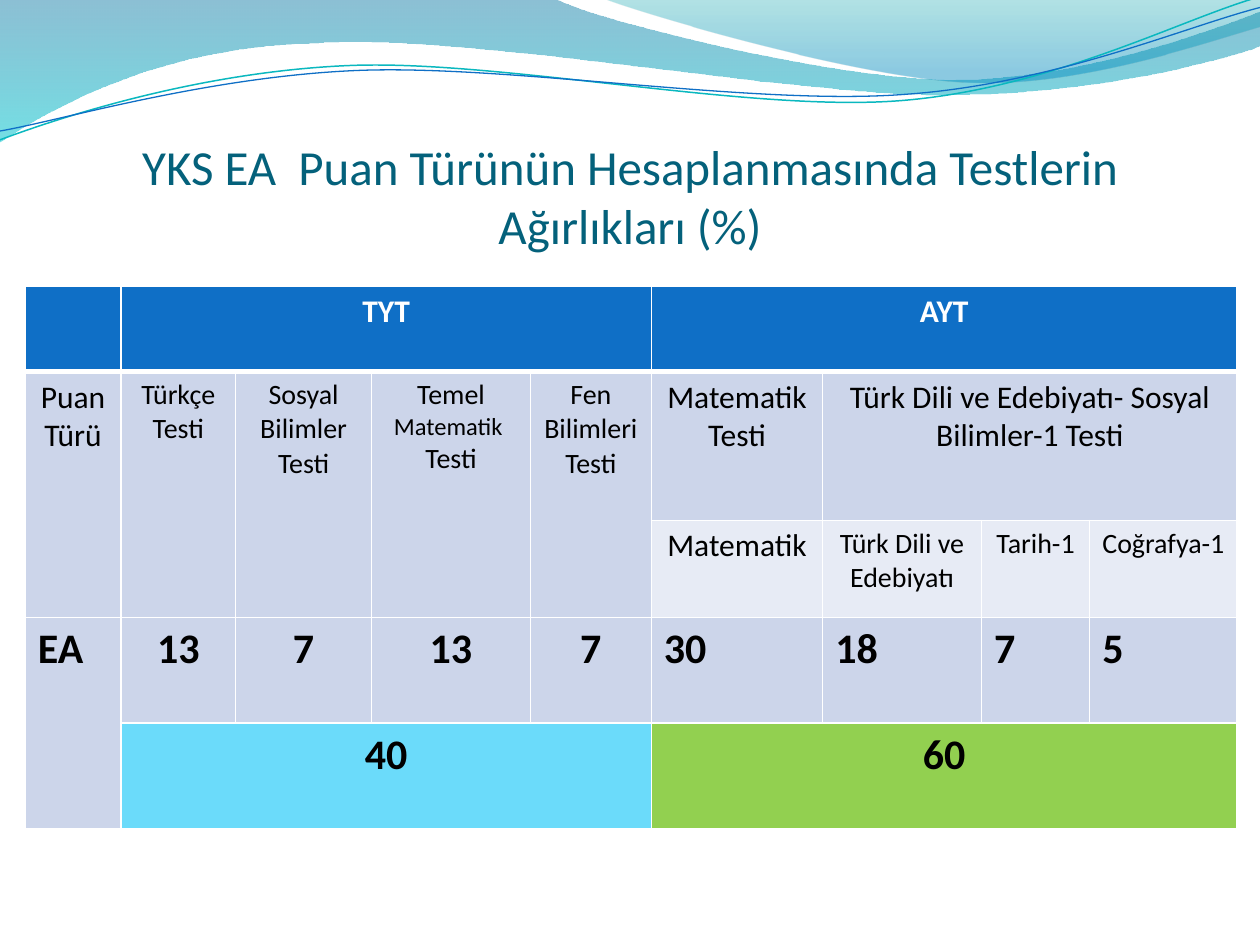
from dataclasses import dataclass
from math import cos, radians, sin

from lxml import etree
from pptx import Presentation
from pptx.dml.color import RGBColor
from pptx.enum.text import MSO_ANCHOR, PP_ALIGN
from pptx.oxml.ns import qn
from pptx.util import Inches, Pt

CENTER, LEFT = PP_ALIGN.CENTER, PP_ALIGN.LEFT
BOTTOM = MSO_ANCHOR.BOTTOM
FONT = "Calibri"
COLORS = {
    "title": "04617B", "header": "0F6FC6", "band": "CCD5EA", "light": "E7EBF5",
    "tyt": "6BDBFA", "ayt": "92D050", "white": "FFFFFF", "black": "000000",
    "deep": "0074A1", "aqua": "00C6CF", "teal": "00A1A9", "sky": "008BBF",
    "teal_line": "0AB8BF",
}


@dataclass
class Stop:
    position: float
    color: str
    opacity: int


@dataclass
class Wave:
    """Outline in inches as drawn: 2 numbers make a line, 6 a Bezier curve."""
    start: tuple
    segments: list
    stops: tuple = ()
    line: str = ""
    width: float = 0
    rotation: float = 0
    center: tuple = (0, 0)


@dataclass
class Entry:
    row: int
    column: int
    paragraphs: list  # each paragraph is a list of (text, size) runs
    fill: str = "band"
    rows: int = 1
    columns: int = 1
    bold: bool = False
    color: str = "black"
    align: PP_ALIGN = CENTER


WAVES = [
    Wave((0, 0), [
        (4.4, -0.01), (4.76, 0.17, 6.64, 0.63, 7.58, 0.63),
        (8.53, 0.63, 9.58, 0.26, 10, 0.09), (10.01, 0.36),
        (9.83, 0.44, 8.7, 0.76, 7.46, 0.75), (6.22, 0.75, 3.82, 0.28, 2.57, 0.34),
        (1.29, 0.36, 0.46, 0.83, -0.01, 1.13), (0, 0),
    ], stops=(Stop(0, "deep", 45), Stop(1, "aqua", 55))),
    Wave((4.79, -0.01), [
        (5.09, 0.11, 6.82, 0.62, 7.69, 0.65), (8.56, 0.69, 9.61, 0.32, 10, 0.21),
        (10, 0), (4.79, -0.01),
    ], stops=(Stop(0, "teal", 30), Stop(0.8, "sky", 45))),
    Wave((0, 1.11), [
        (0.48, 0.93, 1.58, 0.57, 2.77, 0.52), (3.95, 0.47, 5.93, 0.89, 7.13, 0.8),
        (8.33, 0.71, 9.38, 0.15, 9.98, -0.02),
    ], line="teal_line", width=0.85, rotation=357.3, center=(4.99, 0.57)),
    Wave((0, 1.04), [
        (0.47, 0.96, 1.64, 0.61, 2.83, 0.56), (4.03, 0.51, 5.97, 0.84, 7.17, 0.75),
        (8.36, 0.67, 9.41, 0.21, 10, 0.06),
    ], line="header", width=0.75, rotation=357.3, center=(5, 0.59)),
]

COLUMN_WIDTHS = [0.76, 0.91, 1.08, 1.26, 0.96, 1.36, 1.26, 0.86, 1.17]
ROW_HEIGHTS = [0.68, 1.18, 0.77, 0.84, 0.84]
WEIGHTS = [13, 7, 13, 7, 30, 18, 7, 5]
ENTRIES = [
    # Exam headings
    Entry(0, 0, [], "header"),
    Entry(0, 1, [[("TYT", 18)]], "header", columns=4, bold=True, color="white"),
    Entry(0, 5, [[("AYT", 18)]], "header", columns=4, bold=True, color="white"),
    # Test names
    Entry(1, 0, [[("Puan Türü", 18)]], rows=2),
    Entry(1, 1, [[("Türkçe Testi", 16)]], rows=2),
    Entry(1, 2, [[("Sosyal Bilimler Testi", 16)]], rows=2),
    Entry(1, 3, [[("Temel ", 16), ("Matematik ", 14)], [("Testi", 16)]], rows=2),
    Entry(1, 4, [[("Fen Bilimleri Testi", 16)]], rows=2),
    Entry(1, 5, [[("Matematik", 18)], [("Testi", 18)]]),
    Entry(1, 6, [[("Türk Dili ve Edebiyatı- Sosyal Bilimler-1 Testi", 18)]], columns=3),
    Entry(2, 5, [[("Matematik", 18)]], "light"),
    Entry(2, 6, [[("Türk Dili ve Edebiyatı", 16)]], "light"),
    Entry(2, 7, [[("Tarih-1", 16)]], "light"),
    Entry(2, 8, [[("Coğrafya-1", 16)]], "light"),
    # Weights: TYT centred, AYT left
    Entry(3, 0, [[("EA", 24)]], rows=2, bold=True, align=LEFT),
    *(Entry(3, column, [[(str(weight), 24)]], bold=True,
            align=CENTER if column < 5 else LEFT)
      for column, weight in enumerate(WEIGHTS, start=1)),
    # Totals
    Entry(4, 1, [[(str(sum(WEIGHTS[:4])), 24)]], "tyt", columns=4, bold=True),
    Entry(4, 5, [[(str(sum(WEIGHTS[4:])), 24)]], "ayt", columns=4, bold=True),
]


def rgb(name: str) -> RGBColor:
    return RGBColor.from_string(COLORS[name])


def unrotated(wave: Wave, x: float, y: float) -> tuple:
    """Place a drawn point in the frame before its rotation, in EMU."""
    angle = radians(-wave.rotation)
    dx, dy = x - wave.center[0], y - wave.center[1]
    return (Inches(wave.center[0] + dx * cos(angle) - dy * sin(angle)),
            Inches(wave.center[1] + dx * sin(angle) + dy * cos(angle)))


def draw_wave(shapes, wave: Wave) -> None:
    points = [unrotated(wave, *segment[i:i + 2])
              for segment in wave.segments for i in range(0, len(segment), 2)]
    builder = shapes.build_freeform(*unrotated(wave, *wave.start))
    builder.add_line_segments(points, close=bool(wave.stops))
    shape = builder.convert_to_shape()
    shape.rotation = wave.rotation
    shape.shadow.inherit = False
    # Join each three line points of a curve into one Bezier segment
    lines = iter(list(shape.element.spPr.iter(qn("a:lnTo"))))
    for segment in wave.segments:
        first, *others = [next(lines) for _ in range(len(segment) // 2)]
        if others:
            curve = etree.Element(qn("a:cubicBezTo"))
            first.addprevious(curve)
            for line in (first, *others):
                curve.append(line[0])
                line.getparent().remove(line)
    if not wave.stops:
        shape.fill.background()
        shape.line.color.rgb = rgb(wave.line)
        shape.line.width = Pt(wave.width)
        return
    shape.line.fill.background()
    shape.fill.gradient()
    shape.fill.gradient_angle = 270
    for target, stop in zip(shape.fill.gradient_stops, wave.stops):
        target.position = stop.position
        target.color.rgb = rgb(stop.color)
    # Opacity of each gradient stop
    for color, stop in zip(shape.element.spPr.iter(qn("a:srgbClr")), wave.stops):
        etree.SubElement(color, qn("a:alpha"), val=str(stop.opacity * 1000))


def format_run(run, size: float, color: str, bold: bool = False) -> None:
    run.font.name = FONT
    run.font.size = Pt(size)
    run.font.bold = bold
    run.font.color.rgb = rgb(color)


def place_title(slide, text: str) -> None:
    title = slide.shapes.title
    title.left, title.top, title.width, title.height = map(Inches, (0.5, 0.77, 9, 1.25))
    frame = title.text_frame
    frame.text = text
    frame.vertical_anchor = BOTTOM
    frame.margin_left = frame.margin_right = frame.margin_bottom = 0
    frame.paragraphs[0].alignment = CENTER
    format_run(frame.paragraphs[0].runs[0], 28, "title")
    slide.shapes.element.append(title.element)  # in front of the waves


def add_borders(cell, row: int) -> None:
    widths = {"lnL": 1, "lnR": 1, "lnT": 3 if row == 1 else 1, "lnB": 3 if row == 0 else 1}
    properties = cell._tc.get_or_add_tcPr()
    for index, (side, width) in enumerate(widths.items()):
        border = etree.Element(qn(f"a:{side}"), w=str(Pt(width)))
        fill = etree.SubElement(border, qn("a:solidFill"))
        etree.SubElement(fill, qn("a:srgbClr"), val=COLORS["white"])
        properties.insert(index, border)


def fill_entry(table, entry: Entry) -> None:
    cell = table.cell(entry.row, entry.column)
    if entry.rows > 1 or entry.columns > 1:
        cell.merge(table.cell(entry.row + entry.rows - 1,
                              entry.column + entry.columns - 1))
    cell.fill.solid()
    cell.fill.fore_color.rgb = rgb(entry.fill)
    add_borders(cell, entry.row)
    for index, runs in enumerate(entry.paragraphs):
        frame = cell.text_frame
        para = frame.add_paragraph() if index else frame.paragraphs[0]
        para.alignment = entry.align
        for text, size in runs:
            run = para.add_run()
            run.text = text
            format_run(run, size, entry.color, entry.bold)


def main() -> None:
    deck = Presentation()
    deck.slide_width, deck.slide_height = Inches(10), Inches(7.5)
    slide = deck.slides.add_slide(deck.slide_layouts[5])
    for wave in WAVES:
        draw_wave(slide.shapes, wave)
    place_title(slide, "YKS EA  Puan Türünün Hesaplanmasında Testlerin Ağırlıkları (%)")
    # Table of test weights
    table = slide.shapes.add_table(
        len(ROW_HEIGHTS), len(COLUMN_WIDTHS), Inches(0.2), Inches(2.27),
        Inches(sum(COLUMN_WIDTHS)), Inches(sum(ROW_HEIGHTS))).table
    for column, width in zip(table.columns, COLUMN_WIDTHS):
        column.width = Inches(width)
    for row, height in zip(table.rows, ROW_HEIGHTS):
        row.height = Inches(height)
    for entry in ENTRIES:
        fill_entry(table, entry)
    deck.save("out.pptx")


if __name__ == "__main__":
    main()
